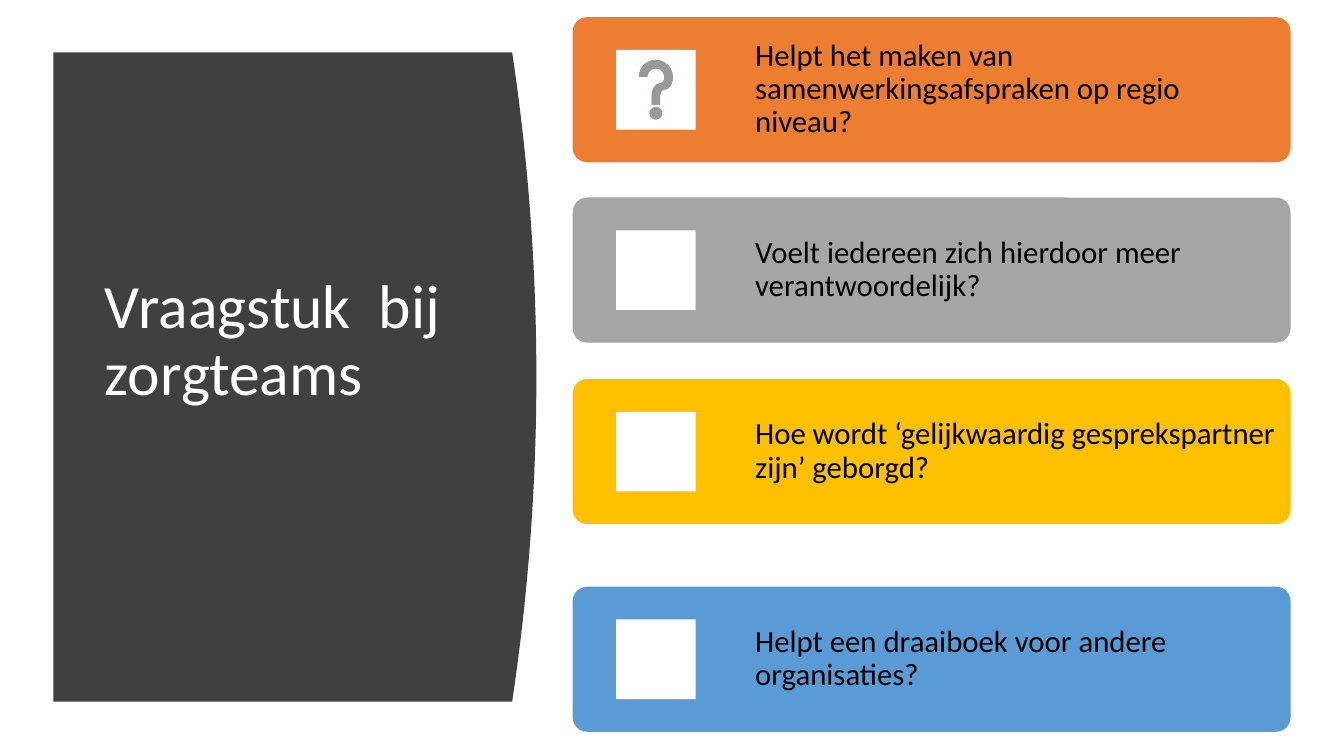
from pptx import Presentation
from pptx.dml.color import RGBColor
from pptx.enum.shapes import MSO_SHAPE
from pptx.enum.text import MSO_ANCHOR, MSO_AUTO_SIZE, PP_ALIGN
from pptx.util import Inches, Pt

ROUNDED = MSO_SHAPE.ROUNDED_RECTANGLE
SQUARE = MSO_SHAPE.RECTANGLE
HELP = MSO_SHAPE.ACTION_BUTTON_HELP
MIDDLE = MSO_ANCHOR.MIDDLE
LEFT = PP_ALIGN.LEFT
NO_FIT = MSO_AUTO_SIZE.NONE
TITLE_ONLY = 5

COLORS = {
    "panel": "404040", "white": "FFFFFF", "black": "000000",
    "orange": "ED7D31", "grey": "A5A5A5", "yellow": "FFC000", "blue": "5B9BD5",
}
PANEL_BOX = (0.53, 0.52, 4.79, 6.44)
CARD_LEFT, CARD_WIDTH, CARD_HEIGHT = 5.68, 7.12, 1.44
QUESTIONS = [
    (0.17, "orange", HELP, "Helpt het maken van samenwerkingsafspraken op regio niveau?"),
    (1.96, "grey", SQUARE, "Voelt iedereen zich hierdoor meer verantwoordelijk?"),
    (3.76, "yellow", SQUARE, "Hoe wordt ‘gelijkwaardig gesprekspartner zijn’ geborgd?"),
    (5.82, "blue", SQUARE, "Helpt een draaiboek voor andere organisaties?"),
]


def place(shape, left, top, width, height):
    """Move and size a shape in inches."""
    shape.left, shape.top = Inches(left), Inches(top)
    shape.width, shape.height = Inches(width), Inches(height)


def paint(shape, color):
    """Give a shape a plain fill without line or shadow."""
    shape.shadow.inherit = False
    shape.fill.solid()
    shape.fill.fore_color.rgb = RGBColor.from_string(COLORS[color])
    shape.line.fill.background()


def write(shape, text, *, size, color, insets):
    """Write left-aligned, vertically centred text into a shape."""
    frame = shape.text_frame
    frame.word_wrap = True
    frame.auto_size = NO_FIT
    frame.vertical_anchor = MIDDLE
    frame.margin_left, frame.margin_top, frame.margin_right, frame.margin_bottom = (
        Inches(inset) for inset in insets
    )
    para = frame.paragraphs[0]
    para.alignment = LEFT
    para.line_spacing = 0.9
    span = para.add_run()
    span.text = text
    span.font.name = "Calibri"
    span.font.size = Pt(size)
    span.font.color.rgb = RGBColor.from_string(COLORS[color])


def add_title_panel(page, box, text):
    """Draw the dark panel with its bulging right edge and set the title on it."""
    left, top, width, height = box
    bulge, steps = 0.24, 40
    edge = []
    for step in range(steps + 1):
        offset = 2 * step / steps - 1
        edge.append((Inches(left + width - bulge * offset ** 2),
                     Inches(top + height * step / steps)))
    builder = page.shapes.build_freeform(Inches(left), Inches(top))
    builder.add_line_segments(edge + [(Inches(left), Inches(top + height))], close=True)
    panel = builder.convert_to_shape()
    paint(panel, "panel")

    title = page.shapes.title
    place(title, left + 0.41, top + 0.59, 3.74, 5.24)
    write(title, text, size=44, color="white", insets=(0.1, 0.05, 0.1, 0.72))
    tree = page.shapes._spTree
    tree.remove(title._element)
    tree.append(title._element)


def add_question_card(page, box, color, icon_kind, text):
    """Draw one coloured card with its icon square and question."""
    left, top, width, height = box
    card = page.shapes.add_shape(ROUNDED, *(Inches(length) for length in box))
    card.adjustments[0] = 0.1
    paint(card, color)

    side = 0.79
    icon = page.shapes.add_shape(
        icon_kind, Inches(left + 0.43), Inches(top + (height - side) / 2),
        Inches(side), Inches(side))
    paint(icon, "white")

    question = page.shapes.add_textbox(
        Inches(left + 1.66), Inches(top), Inches(width - 1.65), Inches(height))
    write(question, text, size=22, color="black", insets=(0.15,) * 4)


def main():
    """Build the slide and save the deck."""
    deck = Presentation()
    deck.slide_width, deck.slide_height = Inches(13.33), Inches(7.5)
    page = deck.slides.add_slide(deck.slide_layouts[TITLE_ONLY])
    add_title_panel(page, PANEL_BOX, "Vraagstuk  bij zorgteams")
    for top, color, icon_kind, text in QUESTIONS:
        box = (CARD_LEFT, top, CARD_WIDTH, CARD_HEIGHT)
        add_question_card(page, box, color, icon_kind, text)
    deck.save("out.pptx")


if __name__ == "__main__":
    main()
